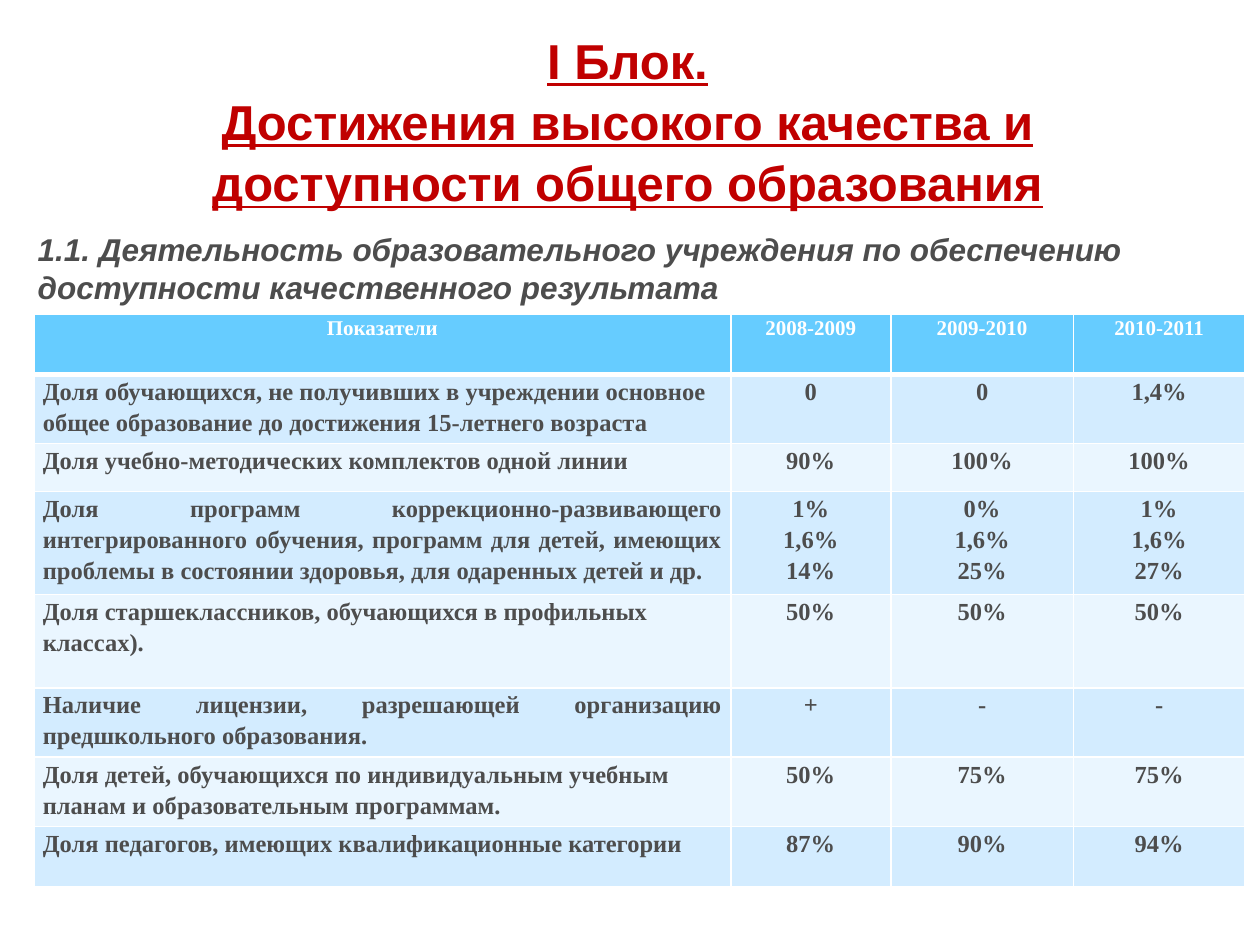
import pptx
import pptx.util
import pptx.dml.color
import pptx.enum.text
import pptx.oxml
import pptx.oxml.ns

Inches, Pt = pptx.util.Inches, pptx.util.Pt
ALIGN = pptx.enum.text.PP_ALIGN
ANCHOR = pptx.enum.text.MSO_ANCHOR

COLORS = {"title": "C00000", "text": "4D4D4D", "white": "FFFFFF",
          "header": "66CCFF", "odd": "D3ECFF", "even": "EAF6FF"}

TITLE = ("I Блок.\vДостижения высокого качества и\v"
         "доступности общего образования")
SUBTITLE = ("1.1. Деятельность образовательного учреждения по обеспечению "
            "доступности качественного результата")
HEADER = ("Показатели", "2008-2009", "2009-2010", "2010-2011")
INDICATORS = [
    ("Доля обучающихся, не получивших в учреждении основное общее образование "
     "до достижения 15-летнего возраста", "0", "0", "1,4%"),
    ("Доля учебно-методических комплектов одной линии", "90%", "100%", "100%"),
    ("Доля программ коррекционно-развивающего интегрированного обучения, "
     "программ для детей, имеющих проблемы в состоянии здоровья, "
     "для одаренных детей и др.",
     "1%\n1,6%\n14%", "0%\n1,6%\n25%", "1%\n1,6%\n27%"),
    ("Доля старшеклассников, обучающихся в профильных классах).",
     "50%", "50%", "50%"),
    ("Наличие лицензии, разрешающей организацию предшкольного образования.",
     "+", "-", "-"),
    ("Доля детей, обучающихся по индивидуальным учебным планам "
     "и образовательным программам.", "50%", "75%", "75%"),
    ("Доля педагогов, имеющих квалификационные категории",
     "87%", "90%", "94%"),
]
JUSTIFIED_ROWS = (3, 5)
COL_WIDTHS = (5.53, 1.27, 1.45, 1.36)
ROW_HEIGHTS = (0.48, 0.55, 0.38, 0.82, 0.74, 0.55, 0.55, 0.48)


def style(p, font, size, color, **flags):
    for r in p.runs:
        r.font.name, r.font.size, r.font.bold = font, Pt(size), True
        r.font.color.rgb = pptx.dml.color.RGBColor.from_string(COLORS[color])
        for name, value in flags.items():
            setattr(r.font, name, value)


def set_borders(cell, widths):
    """Give the cell white borders; widths maps L, R, T, B to points."""
    tc_pr = cell._tc.get_or_add_tcPr()
    for i, (side, width) in enumerate(widths.items()):
        tc_pr.insert(i, pptx.oxml.parse_xml(
            f'<a:ln{side} {pptx.oxml.ns.nsdecls("a")} w="{Pt(width)}"><a:solidFill>'
            f'<a:srgbClr val="{COLORS["white"]}"/></a:solidFill></a:ln{side}>'))


def fill_cell(cell, text, row, col):
    is_header = row == 0
    band = "header" if is_header else "odd" if row % 2 else "even"
    cell.fill.solid()
    cell.fill.fore_color.rgb = pptx.dml.color.RGBColor.from_string(COLORS[band])
    set_borders(cell, {"L": 1, "R": 1, "T": 3 if row == 1 else 1,
                       "B": 3 if is_header else 1})
    cell.margin_left = cell.margin_right = Inches(0.07)
    cell.margin_top = cell.margin_bottom = 0
    cell.text_frame.text = text
    if is_header or col:
        align = ALIGN.CENTER
    else:
        align = ALIGN.JUSTIFY if row in JUSTIFIED_ROWS else ALIGN.LEFT
    spaced = align == ALIGN.CENTER and "\n" not in text
    for p in cell.text_frame.paragraphs:
        p.alignment, p.line_spacing = align, 1.15
        p.space_after = Pt(10 if spaced else 0)
        style(p, "Times New Roman", 12 if is_header else 14,
              "white" if is_header else "text")


def main():
    prs = pptx.Presentation()
    prs.slide_width, prs.slide_height = Inches(10), Inches(7.5)
    slide = prs.slides.add_slide(prs.slide_layouts[5])

    title = slide.shapes.title
    title.left, title.top = Inches(0.12), Inches(0.25)
    title.width, title.height = Inches(9.72), Inches(1.4)
    tf = title.text_frame
    tf.text, tf.word_wrap = TITLE, True
    tf.auto_size = pptx.enum.text.MSO_AUTO_SIZE.NONE
    tf.vertical_anchor = ANCHOR.MIDDLE
    p = tf.paragraphs[0]
    p.alignment, p.line_spacing = ALIGN.CENTER, 1.04
    style(p, "Arial", 28, "title", underline=True)

    table = slide.shapes.add_table(
        len(ROW_HEIGHTS), len(COL_WIDTHS), Inches(0.27), Inches(2.49),
        Inches(sum(COL_WIDTHS)), Inches(sum(ROW_HEIGHTS))).table
    for column, width in zip(table.columns, COL_WIDTHS):
        column.width = Inches(width)
    for row, height in zip(table.rows, ROW_HEIGHTS):
        row.height = Inches(height)
    for row, texts in enumerate([HEADER, *INDICATORS]):
        for col, text in enumerate(texts):
            fill_cell(table.cell(row, col), text, row, col)

    subtitle = slide.shapes.add_textbox(
        Inches(0.2), Inches(1.78), Inches(9.69), Inches(0.71))
    tf = subtitle.text_frame
    tf.text, tf.word_wrap = SUBTITLE, True
    style(tf.paragraphs[0], "Arial", 18, "text", italic=True)

    prs.save("out.pptx")


if __name__ == "__main__":
    main()
